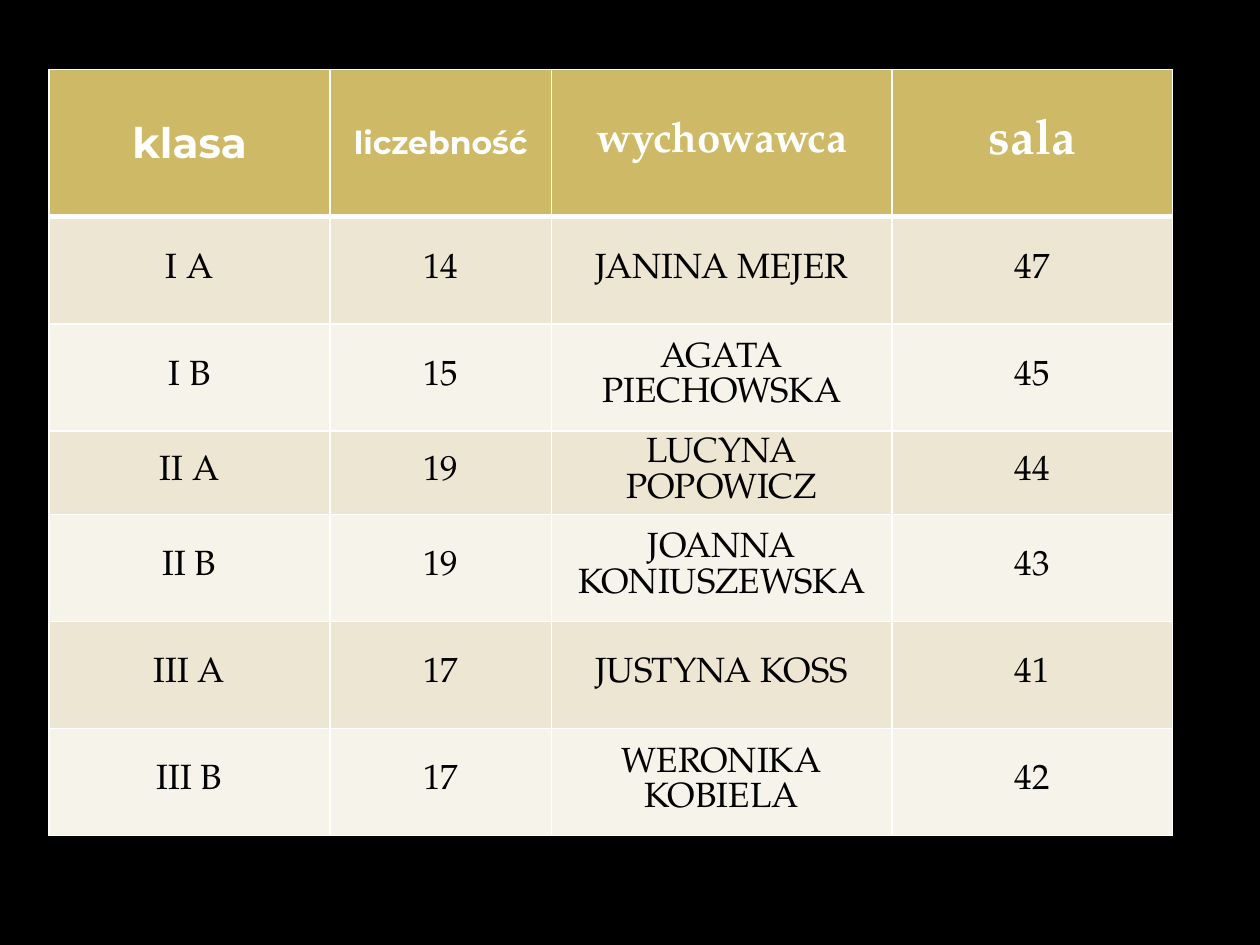
import pptx
import pptx.dml.color
import pptx.enum.text
import pptx.oxml.ns
import pptx.util
from dataclasses import dataclass
from lxml import etree

Cm = pptx.util.Cm
Pt = pptx.util.Pt


@dataclass(frozen=True)
class Theme:
    back: str = "000000"
    head: str = "CEB966"
    bands: tuple = ("EDE6D3", "F6F3EA")
    light: str = "FFFFFF"
    dark: str = "000000"
    sans: str = "Montserrat"
    serif: str = "TeX Gyre Pagella"
    small: int = 18
    body: int = 20
    large: int = 24
    huge: int = 28
    thin: int = 1
    thick: int = 3


def color(code):
    return pptx.dml.color.RGBColor.from_string(code)


class Deck:
    def __init__(self, theme):
        self.theme = theme
        self.file = pptx.Presentation()
        self.file.slide_width, self.file.slide_height = Cm(25.4), Cm(19.05)
        self.slide = self.file.slides.add_slide(self.file.slide_layouts[6])
        fill = self.slide.background.fill
        fill.solid()
        fill.fore_color.rgb = color(theme.back)

    def table(self, left, top, cols, rows):
        """Add an empty table from lists of column widths and row heights."""
        frame = self.slide.shapes.add_table(
            len(rows), len(cols), Cm(left), Cm(top), Cm(sum(cols)), Cm(sum(rows)))
        grid = frame.table
        for col, width in zip(grid.columns, cols):
            col.width = Cm(width)
        for row, height in zip(grid.rows, rows):
            row.height = Cm(height)
        return grid

    def edge(self, cell, side, width):
        qn = pptx.oxml.ns.qn
        props = cell._tc.get_or_add_tcPr()
        line = etree.SubElement(props, qn(f"a:ln{side}"), w=str(Pt(width)))
        fill = etree.SubElement(line, qn("a:solidFill"))
        etree.SubElement(fill, qn("a:srgbClr"), val=self.theme.light)

    def cell(self, cell, text, fill, ink, font, size, bold=False,
             above=Theme.thin, below=Theme.thin):
        """Fill, frame and write one cell; above and below are line widths."""
        thin = self.theme.thin
        for side, width in zip("LRTB", (thin, thin, above, below)):
            self.edge(cell, side, width)
        cell.fill.solid()
        cell.fill.fore_color.rgb = color(fill)
        cell.vertical_anchor = pptx.enum.text.MSO_ANCHOR.MIDDLE
        para = cell.text_frame.paragraphs[0]
        para.alignment = pptx.enum.text.PP_ALIGN.CENTER
        run = para.add_run()
        run.text = text
        run.font.name = font
        run.font.size = Pt(size)
        run.font.bold = bold
        run.font.color.rgb = color(ink)

    def save(self):
        self.file.save("out.pptx")


def main():
    theme = Theme()
    deck = Deck(theme)
    heads = [
        ("klasa", theme.sans, theme.large),
        ("liczebność", theme.sans, theme.small),
        ("wychowawca", theme.serif, theme.large),
        ("sala", theme.serif, theme.huge),
    ]
    groups = [
        ("I A", "14", "JANINA MEJER", "47"),
        ("I B", "15", "AGATA PIECHOWSKA", "45"),
        ("II A", "19", "LUCYNA POPOWICZ", "44"),
        ("II B", "19", "JOANNA KONIUSZEWSKA", "43"),
        ("III A", "17", "JUSTYNA KOSS", "41"),
        ("III B", "17", "WERONIKA KOBIELA", "42"),
    ]
    tall, short = 2.16, 1.55
    rows = [2.97, tall, tall, short, tall, tall, tall]
    grid = deck.table(0.99, 1.4, [5.66, 4.47, 6.86, 5.66], rows)

    for col, (text, font, size) in enumerate(heads):
        deck.cell(grid.cell(0, col), text, theme.head, theme.light,
                  font, size, bold=True, below=theme.thick)
    for row, group in enumerate(groups, 1):
        band = theme.bands[(row - 1) % 2]
        above = theme.thick if row == 1 else theme.thin
        for col, text in enumerate(group):
            deck.cell(grid.cell(row, col), text, band, theme.dark,
                      theme.serif, theme.body, above=above)
    deck.save()


if __name__ == "__main__":
    main()
